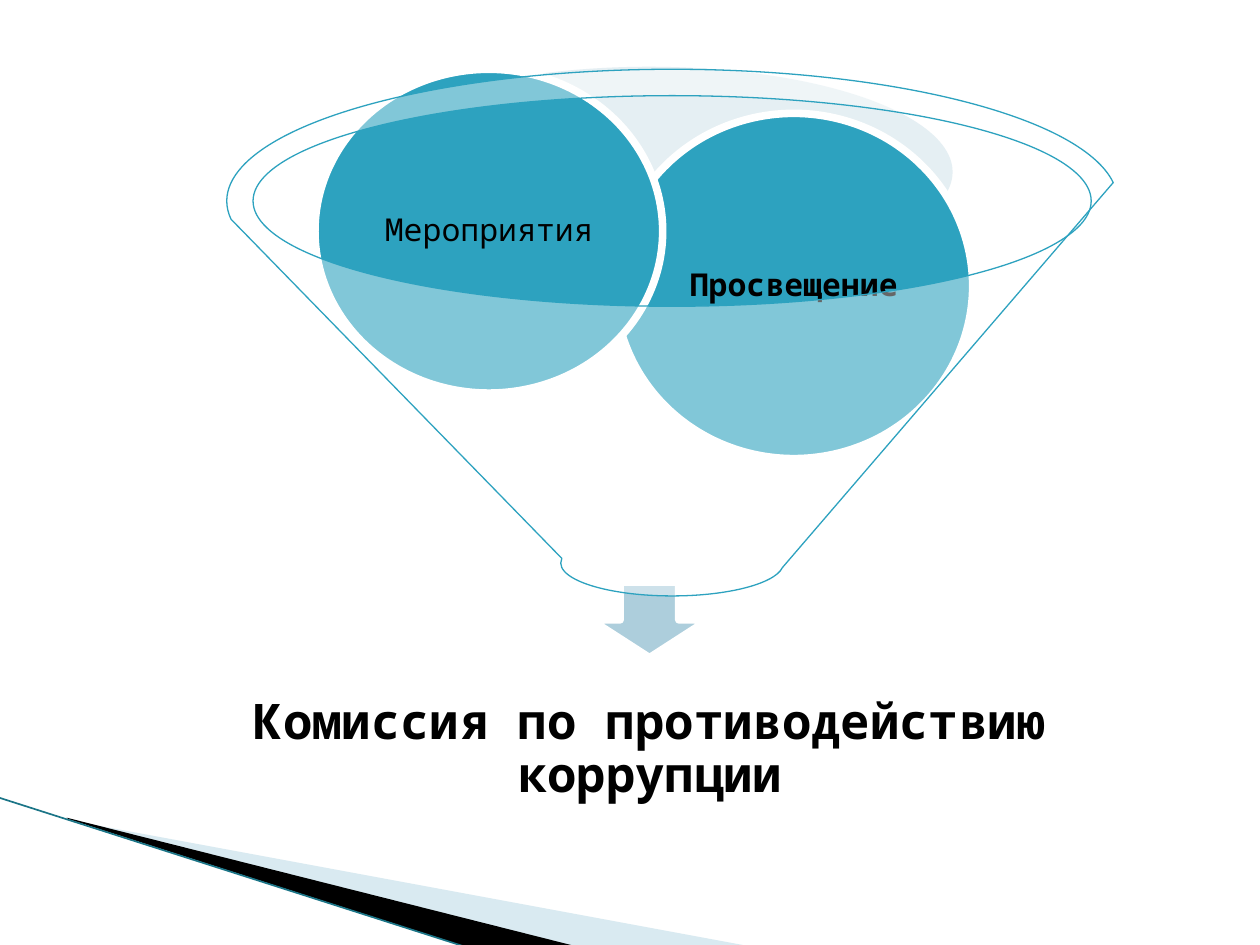
from lxml import etree
from pptx import Presentation
from pptx.dml.color import RGBColor
from pptx.enum.shapes import MSO_CONNECTOR, MSO_SHAPE
from pptx.enum.text import MSO_ANCHOR, PP_ALIGN
from pptx.oxml.ns import qn
from pptx.util import Inches, Pt

TEAL = RGBColor(0x2D, 0xA2, 0xBF)
DEEP = RGBColor(0x1B, 0x75, 0x87)
PALE = RGBColor(0xA0, 0xCB, 0xDC)
MIST = RGBColor(0xBE, 0xD7, 0xE2)
STEEL = RGBColor(0xAD, 0xCE, 0xDC)
WHITE = RGBColor(0xFF, 0xFF, 0xFF)
BLACK = RGBColor(0, 0, 0)


def paint(shape, fill, edge=None, width=0, alpha=None):
    """Set fill, outline and fill opacity in percent."""
    shape.shadow.inherit = False
    shape.fill.solid()
    shape.fill.fore_color.rgb = fill
    if alpha:
        color = shape.fill._xPr.find(qn("a:solidFill"))[0]
        etree.SubElement(color, qn("a:alpha")).set("val", str(alpha * 1000))
    if edge is None:
        shape.line.fill.background()
    else:
        shape.line.color.rgb = edge
        shape.line.width = Pt(width)


def write(shape, text, size, bold, inset):
    frame = shape.text_frame
    frame.text = text
    frame.word_wrap = True
    frame.vertical_anchor = MSO_ANCHOR.MIDDLE
    frame.margin_left = frame.margin_right = Inches(inset)
    frame.margin_top = frame.margin_bottom = Inches(inset)
    para = frame.paragraphs[0]
    para.alignment = PP_ALIGN.CENTER
    para.line_spacing = 0.9
    font = para.runs[0].font
    font.name = "Noto Sans Mono"
    font.size = Pt(size)
    font.bold = bold
    font.color.rgb = BLACK


prs = Presentation()
prs.slide_width = Inches(10)
prs.slide_height = Inches(7.5)
shapes = prs.slides.add_slide(prs.slide_layouts[6]).shapes

# Corner wedges
wedges = [
    ([(0.55, 6.51), (5.95, 7.51), (4.56, 7.51), (0.55, 6.5)], PALE, 40),
    ([(0.53, 6.49), (4.57, 7.51), (3.72, 7.52), (0.54, 6.5)], BLACK, None),
]
for points, color, alpha in wedges:
    first, *rest = [(Inches(x), Inches(y)) for x, y in points]
    pen = shapes.build_freeform(*first)
    pen.add_line_segments(rest)
    paint(pen.convert_to_shape(), color, alpha=alpha)

edge = shapes.add_connector(MSO_CONNECTOR.STRAIGHT, Inches(-0.01), Inches(6.33),
                            Inches(3.71), Inches(7.52))
edge.line.color.rgb = DEEP
edge.line.width = Pt(0.95)
etree.SubElement(edge._element.spPr, qn("a:effectLst"))

# Funnel diagram
rim = shapes.add_shape(MSO_SHAPE.OVAL, Inches(2.74), Inches(0.53),
                       Inches(4.82), Inches(1.67))
paint(rim, MIST, alpha=40)

arrow = shapes.add_shape(MSO_SHAPE.DOWN_ARROW, Inches(4.69), Inches(4.62),
                         Inches(0.93), Inches(0.6))
paint(arrow, STEEL, WHITE, 4.33)

result = shapes.add_textbox(Inches(1.55), Inches(5.35), Inches(7.22), Inches(1.2))
write(result, "Комиссия по противодействию коррупции", 28, True, 0.22)

balls = [
    ("Просвещение", 4.88, 0.9, 2.84, 2.74, True),
    ("Мероприятия", 2.5, 0.55, 2.76, 2.57, False),
]
for text, left, top, width, height, bold in balls:
    ball = shapes.add_shape(MSO_SHAPE.OVAL, Inches(left), Inches(top),
                            Inches(width), Inches(height))
    paint(ball, TEAL, WHITE, 4.33)
    write(ball, text, 18, bold, 0.03)

funnel = shapes.add_shape(MSO_SHAPE.FUNNEL, Inches(1.8), Inches(0.55),
                          Inches(7.07), Inches(4.18))
paint(funnel, WHITE, TEAL, 0.75, alpha=40)

prs.save("out.pptx")
